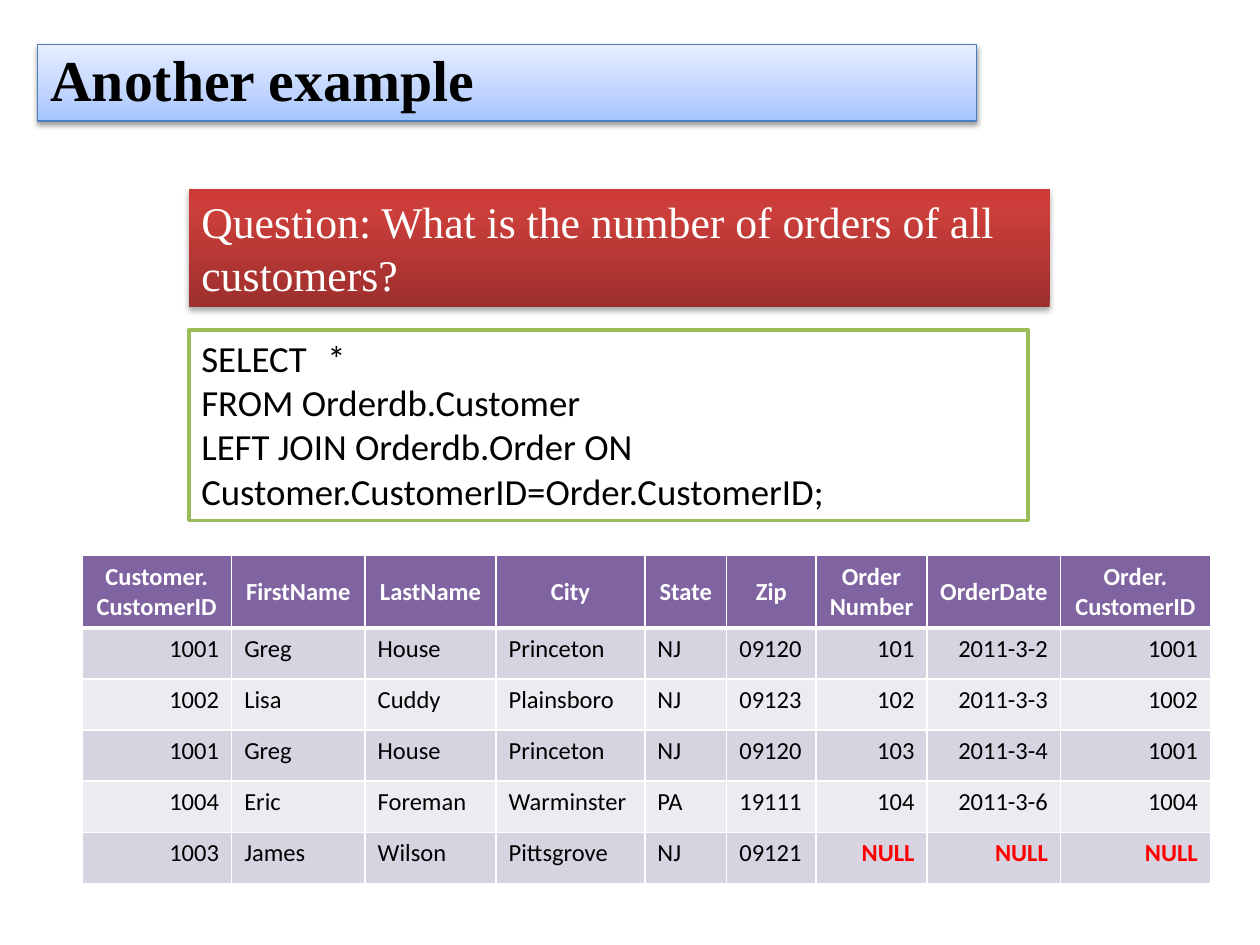
from copy import deepcopy

from lxml import etree
from pptx import Presentation
from pptx.dml.color import RGBColor
from pptx.enum.shapes import MSO_SHAPE
from pptx.enum.text import MSO_ANCHOR, MSO_AUTO_SIZE, PP_ALIGN
from pptx.oxml.ns import qn
from pptx.util import Cm, Pt

RECT = MSO_SHAPE.RECTANGLE
TOP, MIDDLE = MSO_ANCHOR.TOP, MSO_ANCHOR.MIDDLE
LEFT, CENTER, RIGHT = PP_ALIGN.LEFT, PP_ALIGN.CENTER, PP_ALIGN.RIGHT
NO_FIT = MSO_AUTO_SIZE.NONE

COLORS = {
    "black": "000000", "white": "FFFFFF", "alert": "FF0000",
    "header": "8064A2", "band_dark": "D8D3E0", "band_light": "EDEAF0",
    "title_line": "4B7EBC", "code_line": "9BBB59",
}
TITLE_STOPS = [(0, "A4C4FF"), (0.35, "BFD4FF"), (1, "E6EEFF")]
QUESTION_STOPS = [(0, "9C2F2D"), (0.8, "CB3E3A"), (1, "CE3B37")]

CODE = [
    "SELECT\t*",
    "FROM Orderdb.Customer",
    "LEFT JOIN Orderdb.Order ON Customer.CustomerID=Order.CustomerID;",
]
# heading, width in cm, alignment of the body cells
COLUMNS = [
    ("Customer.\nCustomerID", 3.02, RIGHT),
    ("FirstName", 2.69, LEFT),
    ("LastName", 2.64, LEFT),
    ("City", 3.0, LEFT),
    ("State", 1.65, LEFT),
    ("Zip", 1.8, LEFT),
    ("Order\nNumber", 2.24, RIGHT),
    ("OrderDate", 2.69, RIGHT),
    ("Order.\nCustomerID", 3.02, RIGHT),
]
ROWS = [
    ["1001", "Greg", "House", "Princeton", "NJ", "09120", "101", "2011-3-2", "1001"],
    ["1002", "Lisa", "Cuddy", "Plainsboro", "NJ", "09123", "102", "2011-3-3", "1002"],
    ["1001", "Greg", "House", "Princeton", "NJ", "09120", "103", "2011-3-4", "1001"],
    ["1004", "Eric", "Foreman", "Warminster", "PA", "19111", "104", "2011-3-6", "1004"],
    ["1003", "James", "Wilson", "Pittsgrove", "NJ", "09121", "NULL", "NULL", "NULL"],
]


def rgb(name):
    return RGBColor.from_string(COLORS[name])


def write(tf, paragraphs, size, font="Calibri", color="black", bold=False,
          align=LEFT, spacing=None):
    """Fill a text frame; a newline inside a paragraph is a line break."""
    for i, text in enumerate(paragraphs):
        p = tf.paragraphs[0] if i == 0 else tf.add_paragraph()
        p.alignment = align
        p.line_spacing = spacing
        for j, line in enumerate(text.split("\n")):
            if j:
                p.add_line_break()
            r = p.add_run()
            r.text = line
            r.font.name, r.font.size, r.font.bold = font, Pt(size), bold
            r.font.color.rgb = rgb(color)


class SlideBuilder:
    heading_font = "Times New Roman"
    table_size = 14

    def __init__(self, prs):
        self.s = prs.slides.add_slide(prs.slide_layouts[5])

    def place(self, sp, box):
        sp.left, sp.top, sp.width, sp.height = (Cm(v) for v in box)

    def gradient(self, sp, stops):
        """Apply a three-stop gradient running from bottom to top."""
        sp.fill.gradient()
        sp.fill.gradient_angle = 90
        gs_list = sp.fill._xPr.find(".//" + qn("a:gsLst"))
        gs_list.append(deepcopy(gs_list[-1]))
        for stop, (position, color) in zip(sp.fill.gradient_stops, stops):
            stop.position = position
            stop.color.rgb = RGBColor.from_string(color)

    def drop_shadow(self, sp, distance, opacity):
        sp.shadow.inherit = False
        effects = sp.element.spPr.find(qn("a:effectLst"))
        shadow = etree.SubElement(
            effects, qn("a:outerShdw"), blurRad=str(Pt(3.1)),
            dist=str(Pt(distance)), dir="5400000", rotWithShape="0")
        color = etree.SubElement(shadow, qn("a:srgbClr"), val=COLORS["black"])
        etree.SubElement(color, qn("a:alpha"), val=str(opacity * 1000))

    def title(self, text, box):
        sp = self.s.shapes.title
        self.place(sp, box)
        self.gradient(sp, TITLE_STOPS)
        sp.line.color.rgb = rgb("title_line")
        sp.line.width = Pt(0.75)
        self.drop_shadow(sp, 1.6, 38)
        tf = sp.text_frame
        tf.auto_size, tf.vertical_anchor = NO_FIT, MIDDLE
        write(tf, [text], 33, font=self.heading_font, bold=True, spacing=0.9)

    def panel(self, box):
        sp = self.s.shapes.add_shape(RECT, *(Cm(v) for v in box))
        sp.shadow.inherit = False
        sp.text_frame.word_wrap = True
        sp.text_frame.vertical_anchor = TOP
        return sp

    def question(self, text, box):
        sp = self.panel(box)
        self.gradient(sp, QUESTION_STOPS)
        sp.line.fill.background()
        self.drop_shadow(sp, 1.8, 35)
        write(sp.text_frame, [text], 25, font=self.heading_font, color="white")

    def code(self, lines, box):
        sp = self.panel(box)
        sp.fill.solid()
        sp.fill.fore_color.rgb = rgb("white")
        sp.line.color.rgb = rgb("code_line")
        sp.line.width = Pt(2)
        write(sp.text_frame, lines, 21)

    def cell(self, cell, text, fill, bottom=1, **fmt):
        tc_pr = cell._tc.get_or_add_tcPr()
        for side, width in zip("LRTB", (1, 1, 1, bottom)):
            ln = etree.SubElement(tc_pr, qn("a:ln" + side), w=str(Pt(width)))
            line_fill = etree.SubElement(ln, qn("a:solidFill"))
            etree.SubElement(line_fill, qn("a:srgbClr"), val=COLORS["white"])
        cell.fill.solid()
        cell.fill.fore_color.rgb = rgb(fill)
        write(cell.text_frame, [text], self.table_size, **fmt)

    def table(self, left, top, header_height, row_height):
        width = sum(col[1] for col in COLUMNS)
        height = header_height + row_height * len(ROWS)
        table = self.s.shapes.add_table(
            len(ROWS) + 1, len(COLUMNS), Cm(left), Cm(top), Cm(width), Cm(height)).table
        for i, row in enumerate(table.rows):
            row.height = Cm(row_height if i else header_height)
        for c, (heading, col_width, align) in enumerate(COLUMNS):
            table.columns[c].width = Cm(col_width)
            head = table.cell(0, c)
            self.cell(head, heading, "header", bottom=3, color="white",
                      bold=True, align=CENTER)
            head.vertical_anchor = MIDDLE
            for i, values in enumerate(ROWS):
                missing = values[c] == "NULL"
                self.cell(table.cell(i + 1, c), values[c],
                          "band_light" if i % 2 else "band_dark", align=align,
                          color="alert" if missing else "black", bold=missing)


def main():
    prs = Presentation()
    prs.slide_width, prs.slide_height = Cm(25.4), Cm(19.05)
    slide = SlideBuilder(prs)
    slide.title("Another example", (0.76, 0.89, 18.92, 1.55))
    slide.question("Question: What is the number of orders of all customers?",
                   (3.81, 3.81, 17.35, 2.39))
    slide.table(1.65, 11.2, header_height=1.44, row_height=1.03)
    slide.code(CODE, (3.81, 6.65, 16.92, 3.84))
    prs.save("out.pptx")


if __name__ == "__main__":
    main()
